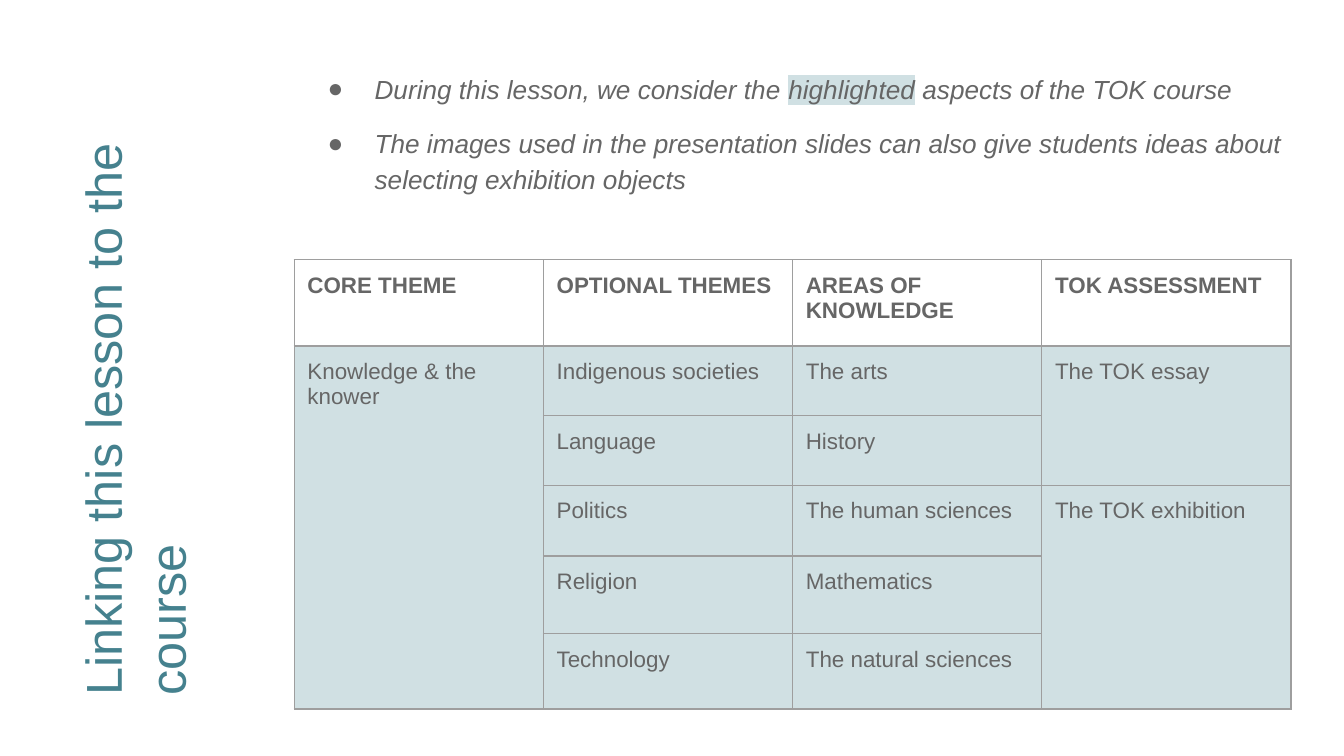
from lxml.etree import SubElement
from pptx import Presentation
from pptx.dml.color import RGBColor
from pptx.enum.text import MSO_ANCHOR, MSO_AUTO_SIZE, PP_ALIGN
from pptx.oxml.ns import qn
from pptx.util import Cm, Pt

COLORS = {"title": "45818E", "text": "666666", "shade": "D0E0E3",
          "white": "FFFFFF", "border": "9E9E9E"}
FONT = "Arial"
INSET = Cm(0.25)
BULLETS = [
    [("During this lesson, we consider the ", False), ("highlighted", True),
     (" aspects of the TOK course", False)],
    [("The images used in the presentation slides can also give students "
      "ideas about selecting exhibition objects", False)],
]
ROWS = [
    ["CORE THEME", "OPTIONAL THEMES", "AREAS OF KNOWLEDGE", "TOK ASSESSMENT"],
    ["Knowledge & the knower", "Indigenous societies", "The arts", "The TOK essay"],
    ["", "Language", "History", ""],
    ["", "Politics", "The human sciences", "The TOK exhibition"],
    ["", "Religion", "Mathematics", ""],
    ["", "Technology", "The natural sciences", ""],
]
ROW_HEIGHTS = [1.63, 1.32, 1.31, 1.34, 1.47, 1.42]
MERGES = [((1, 0), (5, 0)), ((1, 3), (2, 3)), ((3, 3), (5, 3))]


def rgb(name):
    """Return a named colour."""
    return RGBColor.from_string(COLORS[name])


def add_run(p, text, size, color="text", bold=False, italic=False):
    """Append a formatted run to a paragraph."""
    r = p.add_run()
    r.text = text
    r.font.size = Pt(size)
    r.font.name = FONT
    r.font.bold = bold
    r.font.italic = italic
    r.font.color.rgb = rgb(color)
    return r


def add_color(parent, tag, name):
    """Append an element holding a named colour."""
    el = SubElement(parent, qn(tag))
    SubElement(el, qn("a:srgbClr"), val=COLORS[name])
    return el


def highlight(r, name):
    """Put a highlight behind a run."""
    rPr = r.font._element
    el = add_color(rPr, "a:highlight", name)
    rPr.find(qn("a:solidFill")).addnext(el)


def set_bullet(p, left, hanging):
    """Give a paragraph a round bullet and a hanging indent."""
    pPr = p._p.get_or_add_pPr()
    pPr.set("marL", str(left))
    pPr.set("indent", str(-hanging))
    add_color(pPr, "a:buClr", "text")
    SubElement(pPr, qn("a:buFont"), typeface=FONT)
    SubElement(pPr, qn("a:buChar"), char="●")


def set_borders(cell, name, width):
    """Draw all four borders of a cell."""
    tcPr = cell._tc.get_or_add_tcPr()
    for side in ("L", "R", "T", "B"):
        ln = SubElement(tcPr, qn(f"a:ln{side}"), w=str(width))
        add_color(ln, "a:solidFill", name)


def set_frame(sp):
    """Prepare a placeholder's text frame."""
    tf = sp.text_frame
    tf.word_wrap = True
    tf.auto_size = MSO_AUTO_SIZE.NONE
    tf.vertical_anchor = MSO_ANCHOR.TOP
    tf.margin_left = tf.margin_right = tf.margin_top = tf.margin_bottom = INSET
    return tf


def place_title(s, x, y, w, h):
    """Fill an upright box with the title reading upwards."""
    sp = s.shapes.title
    sp.left, sp.top = Cm(x + (w - h) / 2), Cm(y + (h - w) / 2)
    sp.width, sp.height = Cm(h), Cm(w)
    sp.rotation = 270
    p = set_frame(sp).paragraphs[0]
    p.alignment = PP_ALIGN.LEFT
    p.line_spacing = 1.06
    add_run(p, "Linking this lesson to the course", 27, "title")


def place_bullets(s, x, y, w, h):
    """Fill a box with the bulleted notes."""
    sp = s.placeholders[1]
    sp.left, sp.top, sp.width, sp.height = Cm(x), Cm(y), Cm(w), Cm(h)
    tf = set_frame(sp)
    for i, parts in enumerate(BULLETS):
        p = tf.add_paragraph() if i else tf.paragraphs[0]
        set_bullet(p, Cm(1.27), Cm(0.89))
        p.line_spacing = 1.15
        p.space_before = p.space_after = Pt(10 if i else 0)
        for text, marked in parts:
            r = add_run(p, text, 14, italic=True)
            if marked:
                highlight(r, "shade")


def place_table(s, x, y, w):
    """Build the course table from its top left corner and width."""
    n_cols = len(ROWS[0])
    frame = s.shapes.add_table(len(ROWS), n_cols, Cm(x), Cm(y), Cm(w),
                               Cm(sum(ROW_HEIGHTS)))
    table = frame.table
    for col in table.columns:
        col.width = Cm(w / n_cols)
    for i, (texts, height) in enumerate(zip(ROWS, ROW_HEIGHTS)):
        table.rows[i].height = Cm(height)
        for j, text in enumerate(texts):
            cell = table.cell(i, j)
            set_borders(cell, "border", Pt(0.75))
            cell.fill.solid()
            cell.fill.fore_color.rgb = rgb("shade" if i else "white")
            cell.margin_left = cell.margin_right = INSET
            cell.margin_top = cell.margin_bottom = INSET
            if text:
                add_run(cell.text_frame.paragraphs[0], text, 12, bold=i == 0)
    for start, end in MERGES:
        table.cell(*start).merge(table.cell(*end))


def main():
    """Build and save the slide."""
    prs = Presentation()
    prs.slide_width, prs.slide_height = Cm(25.4), Cm(14.29)
    s = prs.slides.add_slide(prs.slide_layouts[1])
    place_title(s, 1.03, 1.03, 3.61, 12.37)
    place_bullets(s, 5.56, 1.04, 18.97, 3.1)
    place_table(s, 5.56, 4.91, 18.84)
    prs.save("out.pptx")


if __name__ == "__main__":
    main()
